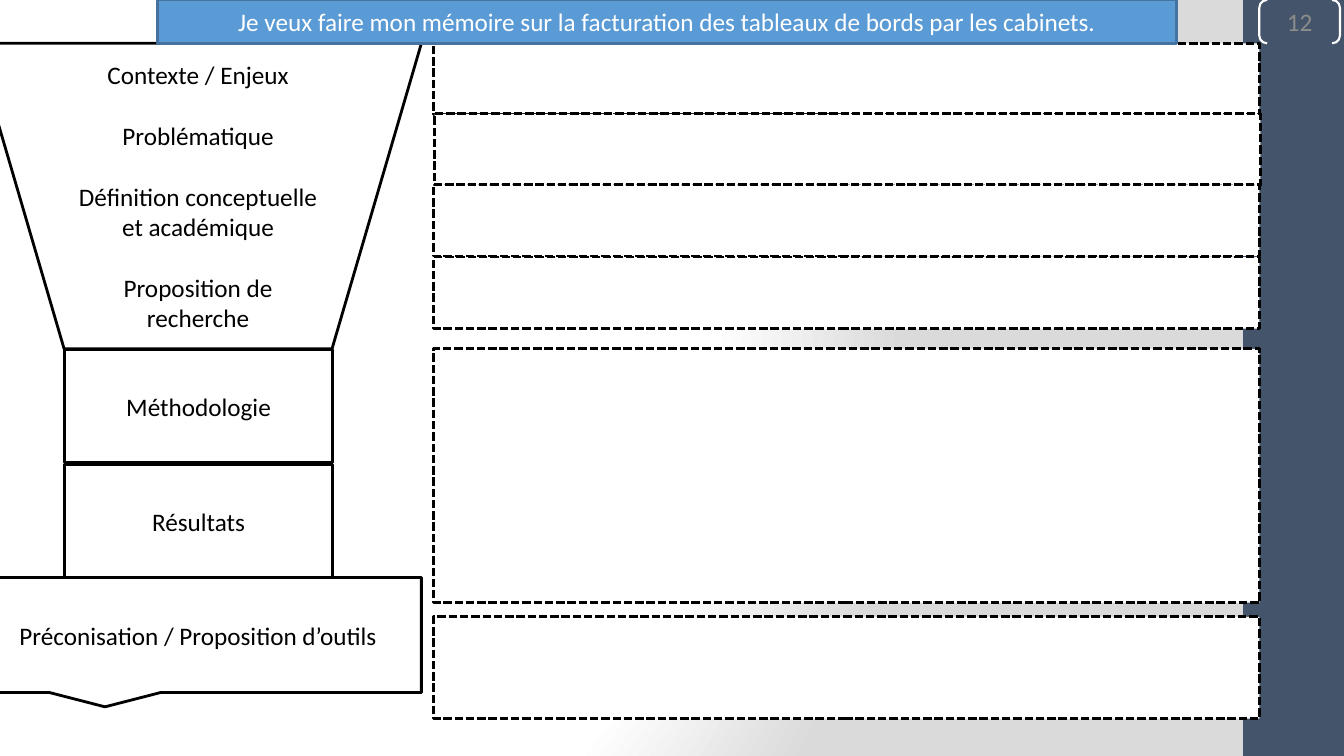
"""Build the thesis outline slide: a funnel of steps beside dashed answer boxes."""
from lxml.etree import SubElement
from pptx import Presentation
from pptx.dml.color import RGBColor
from pptx.enum.dml import MSO_LINE
from pptx.enum.shapes import MSO_SHAPE
from pptx.enum.text import MSO_ANCHOR, PP_ALIGN
from pptx.oxml.ns import qn
from pptx.util import Inches, Pt

FONT = "Calibri"
SIZE = 18
GAP = 22
STAGES = ["Contexte / Enjeux", "Problématique",
          "Définition conceptuelle et académique", "Proposition de recherche"]
STEPS = [
    (MSO_SHAPE.FLOWCHART_MANUAL_OPERATION, (-0.25, 0.43, 4.43, 3.03), STAGES),
    (MSO_SHAPE.RECTANGLE, (0.64, 3.47, 2.66, 1.12), ["Méthodologie"]),
    (MSO_SHAPE.RECTANGLE, (0.64, 4.61, 2.66, 1.12), ["Résultats"]),
    (MSO_SHAPE.RECTANGULAR_CALLOUT, (-0.25, 5.73, 4.43, 1.14),
     ["Préconisation / Proposition d’outils"]),
]
ANSWERS = [(4.3, 0.43, 0.71), (4.31, 1.13, 0.71), (4.3, 2.55, 0.71),
           (4.3, 3.46, 2.52), (4.3, 6.12, 1.01), (4.3, 1.83, 0.71)]
TITLE = "Je veux faire mon mémoire sur la facturation des tableaux de bords par les cabinets."


def color(code):
    """Turn a hex string into a colour."""
    return RGBColor.from_string(code)


def paint(slide):
    """Give the slide its round white to grey gradient."""
    slide.background.fill.gradient()
    grad = slide.element.find(".//" + qn("a:gradFill"))
    for part in list(grad):
        grad.remove(part)
    stops = SubElement(grad, qn("a:gsLst"))
    for place, code in ((0, "FFFFFF"), (75, "FFFFFF"), (100, "DADADA")):
        stop = SubElement(stops, qn("a:gs"), pos=str(place * 1000))
        SubElement(stop, qn("a:srgbClr"), val=code)
    round_to = SubElement(grad, qn("a:path"), path="circle")
    SubElement(round_to, qn("a:fillToRect"), l="20000", t="50000", r="100000", b="50000")


def add_box(slide, kind, area, fill=None, line=None, width=2):
    """Add a flat shape, with or without fill and outline."""
    box = slide.shapes.add_shape(kind, *(Inches(side) for side in area))
    box.shadow.inherit = False
    if fill:
        box.fill.solid()
        box.fill.fore_color.rgb = color(fill)
    else:
        box.fill.background()
    if line:
        box.line.color.rgb = color(line)
        box.line.width = Pt(width)
    else:
        box.line.fill.background()
    return box


def write(box, lines, ink):
    """Centre lines of text in a box, one paragraph each."""
    frame = box.text_frame
    frame.word_wrap = True
    frame.vertical_anchor = MSO_ANCHOR.MIDDLE
    for rank, line in enumerate(lines):
        para = frame.add_paragraph() if rank else frame.paragraphs[0]
        para.alignment = PP_ALIGN.CENTER
        if rank:
            para.space_before = Pt(GAP)
        run = para.add_run()
        run.text = line
        run.font.name = FONT
        run.font.size = Pt(SIZE)
        run.font.color.rgb = color(ink)


def add_number(slide, label):
    """Add the side band and the bracketed page number."""
    add_box(slide, MSO_SHAPE.RECTANGLE, (12.33, 0, 1, 7.5), "44546A")
    box = add_box(slide, MSO_SHAPE.DOUBLE_BRACKET, (12.49, 0, 0.8, 0.43),
                  line="FFFFFF", width=1.5)
    box.adjustments[0] = 0.18
    frame = box.text_frame
    frame.margin_left = frame.margin_right = frame.margin_top = frame.margin_bottom = 0
    write(box, [label], "8C8C8C")


def main():
    """Build and save the slide."""
    deck = Presentation()
    deck.slide_width, deck.slide_height = Inches(13.33), Inches(7.5)
    slide = deck.slides.add_slide(deck.slide_layouts[6])
    paint(slide)
    add_number(slide, "12")
    for kind, area, lines in STEPS:
        write(add_box(slide, kind, area, "FFFFFF", "000000"), lines, "000000")
    for left, top, height in ANSWERS:
        box = add_box(slide, MSO_SHAPE.RECTANGLE, (left, top, 8.19, height),
                      "FFFFFF", "000000")
        box.line.dash_style = MSO_LINE.SQUARE_DOT
    title = add_box(slide, MSO_SHAPE.RECTANGLE, (1.56, 0, 10.11, 0.43), "5B9BD5", "43739E")
    write(title, [TITLE], "FFFFFF")
    deck.save("out.pptx")


if __name__ == "__main__":
    main()
